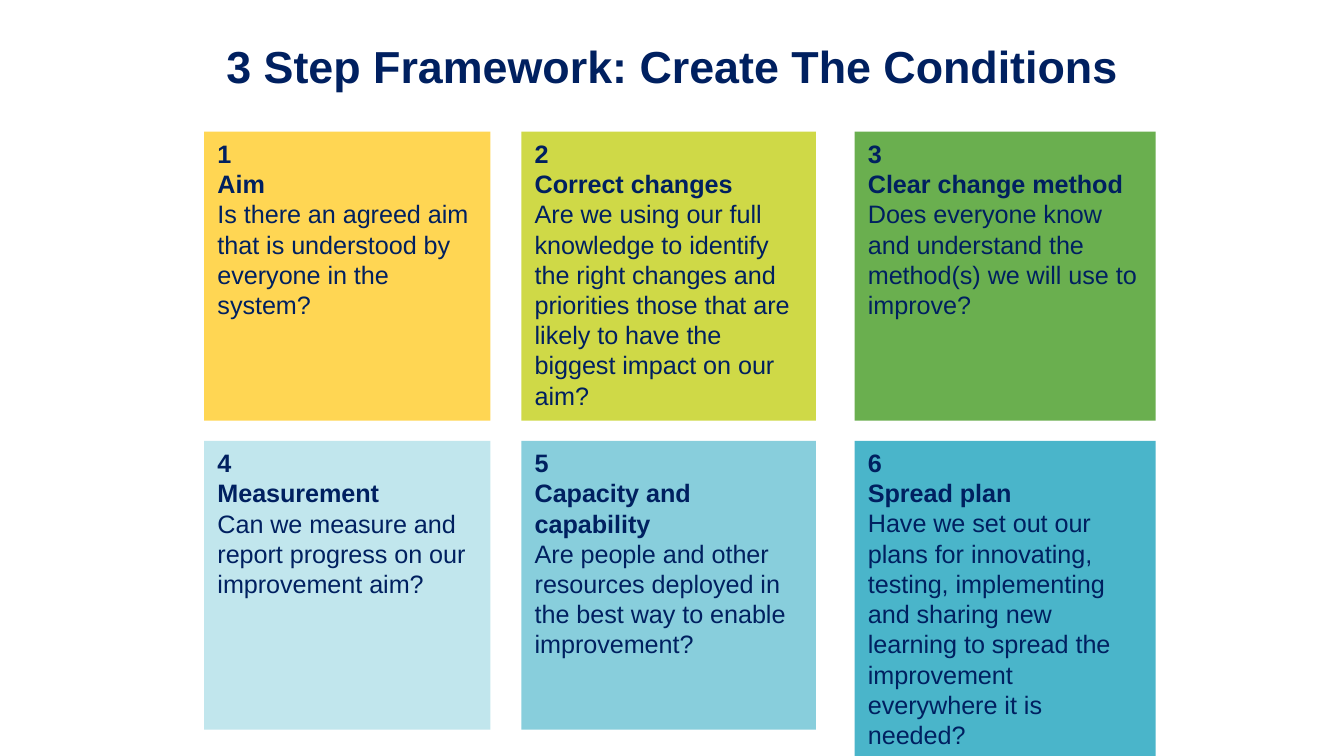
from pptx import Presentation
from pptx.dml.color import RGBColor
from pptx.enum.shapes import MSO_SHAPE
from pptx.enum.text import MSO_ANCHOR, PP_ALIGN
from pptx.util import Inches, Pt

RECT = MSO_SHAPE.RECTANGLE
TOP = MSO_ANCHOR.TOP
LEFT, CENTER = PP_ALIGN.LEFT, PP_ALIGN.CENTER

FONT = "Arial"
COLORS = {
    "navy": "002060",
    "yellow": "FFD653",
    "lime": "CFD947",
    "green": "6AAF4F",
    "pale": "C1E6ED",
    "sky": "88CEDC",
    "teal": "4AB5CA",
}

# Left edge and width of each column, top edge of each row
COLS = [(1.52, 2.13), (3.88, 2.19), (6.36, 2.24)]
ROWS = [0.98, 3.28]
HEIGHT = 2.15
TALL = 2.37  # the last card holds one more line

CARDS = [
    ("yellow", "Aim",
     "Is there an agreed aim that is understood by everyone in the system?"),
    ("lime", "Correct changes",
     "Are we using our full knowledge to identify the right changes and "
     "priorities those that are likely to have the biggest impact on our aim?"),
    ("green", "Clear change method",
     "Does everyone know and understand the method(s) we will use to improve?"),
    ("pale", "Measurement",
     "Can we measure and report progress on our improvement aim?"),
    ("sky", "Capacity and capability",
     "Are people and other resources deployed in the best way to enable "
     "improvement?"),
    ("teal", "Spread plan",
     "Have we set out our plans for innovating, testing, implementing and "
     "sharing new learning to spread the improvement everywhere it is needed?"),
]


def color(name):
    return RGBColor.from_string(COLORS[name])


def style(para, size, bold, align):
    para.alignment = align
    for run in para.runs:
        run.font.name = FONT
        run.font.size = Pt(size)
        run.font.bold = bold
        run.font.color.rgb = color("navy")


def add_title(slide, box, text):
    frame = slide.shapes.add_textbox(*map(Inches, box)).text_frame
    frame.word_wrap = True
    frame.text = text
    style(frame.paragraphs[0], 24, True, CENTER)


def add_card(slide, box, fill, lines):
    card = slide.shapes.add_shape(RECT, *map(Inches, box))
    card.shadow.inherit = False
    card.fill.solid()
    card.fill.fore_color.rgb = color(fill)
    card.line.fill.background()
    frame = card.text_frame
    frame.word_wrap = True
    frame.vertical_anchor = TOP
    frame.text = "\n".join(lines)
    # Number and heading are bold, the question is not
    for i, para in enumerate(frame.paragraphs):
        style(para, 13.5, i < 2, LEFT)


def add_grid(slide):
    for i, (fill, head, body) in enumerate(CARDS):
        row, col = divmod(i, len(COLS))
        left, width = COLS[col]
        height = TALL if i == len(CARDS) - 1 else HEIGHT
        box = (left, ROWS[row], width, height)
        add_card(slide, box, fill, (str(i + 1), head, body))


def main():
    prs = Presentation()
    prs.slide_width = Inches(10)
    prs.slide_height = Inches(10 * 9 / 16)  # widescreen
    slide = prs.slides.add_slide(prs.slide_layouts[6])
    add_grid(slide)
    add_title(slide, (1.25, 0.24, 7.5, 0.5),
              "3 Step Framework: Create The Conditions")
    prs.save("out.pptx")


if __name__ == "__main__":
    main()
